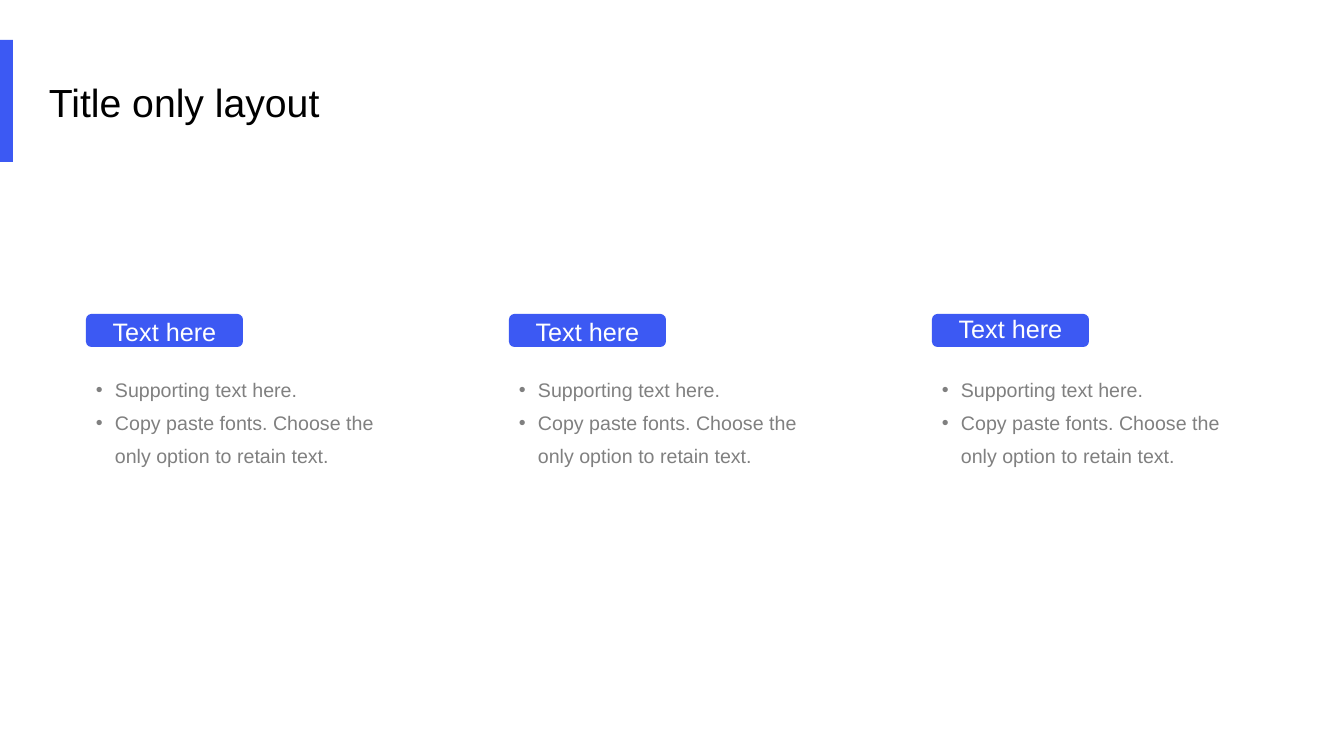
from lxml import etree
from pptx import Presentation
from pptx.dml.color import RGBColor
from pptx.enum.shapes import MSO_SHAPE
from pptx.enum.text import MSO_ANCHOR, PP_ALIGN
from pptx.oxml.ns import qn
from pptx.util import Pt

SLIDE_WIDTH, SLIDE_HEIGHT = 1344, 756
SCALE = 12192000 / SLIDE_WIDTH  # EMU per px

BLUE = RGBColor(0x3C, 0x59, 0xF3)
GRAY = RGBColor(0x80, 0x80, 0x80)
BLACK = RGBColor(0x00, 0x00, 0x00)
WHITE = RGBColor(0xFF, 0xFF, 0xFF)

RECTANGLE = MSO_SHAPE.RECTANGLE
ROUNDED = MSO_SHAPE.ROUNDED_RECTANGLE
LEFT, CENTER = PP_ALIGN.LEFT, PP_ALIGN.CENTER
TOP, MIDDLE = MSO_ANCHOR.TOP, MSO_ANCHOR.MIDDLE

FONT = "Arial"
COLUMN_LEFT, COLUMN_STEP = 86, 423
LABEL_WIDTH = 157
LABEL_TOPS = [311, 311, 308]
BULLET_INDENT = 19
SUPPORTING_TEXT = [
    "Supporting text here.",
    "Copy paste fonts. Choose the only option to retain text.",
]


def px(value):
    return round(value * SCALE)


def add_block(slide, kind, left, top, width, height):
    shape = slide.shapes.add_shape(kind, px(left), px(top), px(width), px(height))
    shape.shadow.inherit = False
    shape.fill.solid()
    shape.fill.fore_color.rgb = BLUE
    shape.line.fill.background()


def add_bullet(paragraph):
    properties = paragraph._p.get_or_add_pPr()
    properties.set("marL", str(px(BULLET_INDENT)))
    properties.set("indent", str(-px(BULLET_INDENT)))
    etree.SubElement(properties, qn("a:buFont"), typeface=FONT)
    etree.SubElement(properties, qn("a:buChar"), char="•")


def add_text(slide, box, lines, size, color, align=LEFT, anchor=TOP, bulleted=False):
    frame = slide.shapes.add_textbox(*map(px, box)).text_frame
    frame.word_wrap = True
    frame.vertical_anchor = anchor
    frame.text = "\n".join(lines)
    for paragraph in frame.paragraphs:
        if bulleted:
            add_bullet(paragraph)
            paragraph.line_spacing = 1.4
        paragraph.alignment = align
        paragraph.font.name = FONT
        paragraph.font.size = Pt(size)
        paragraph.font.color.rgb = color


def add_column(slide, left, label_top):
    add_block(slide, ROUNDED, left, 314, LABEL_WIDTH, 33)
    add_text(slide, (left, label_top, LABEL_WIDTH, 41), ["Text here"], 18, WHITE,
             align=CENTER, anchor=MIDDLE)
    add_text(slide, (left, 364, 336, 113), SUPPORTING_TEXT, 14, GRAY, bulleted=True)


def main():
    presentation = Presentation()
    presentation.slide_width = px(SLIDE_WIDTH)
    presentation.slide_height = px(SLIDE_HEIGHT)
    slide = presentation.slides.add_slide(presentation.slide_layouts[6])

    # Title with accent bar
    add_block(slide, RECTANGLE, 0, 40, 13, 122)
    add_text(slide, (39, 73, 354, 57), ["Title only layout"], 28, BLACK)

    # Three labelled columns
    for index, label_top in enumerate(LABEL_TOPS):
        add_column(slide, COLUMN_LEFT + index * COLUMN_STEP, label_top)

    presentation.save("out.pptx")


if __name__ == "__main__":
    main()
